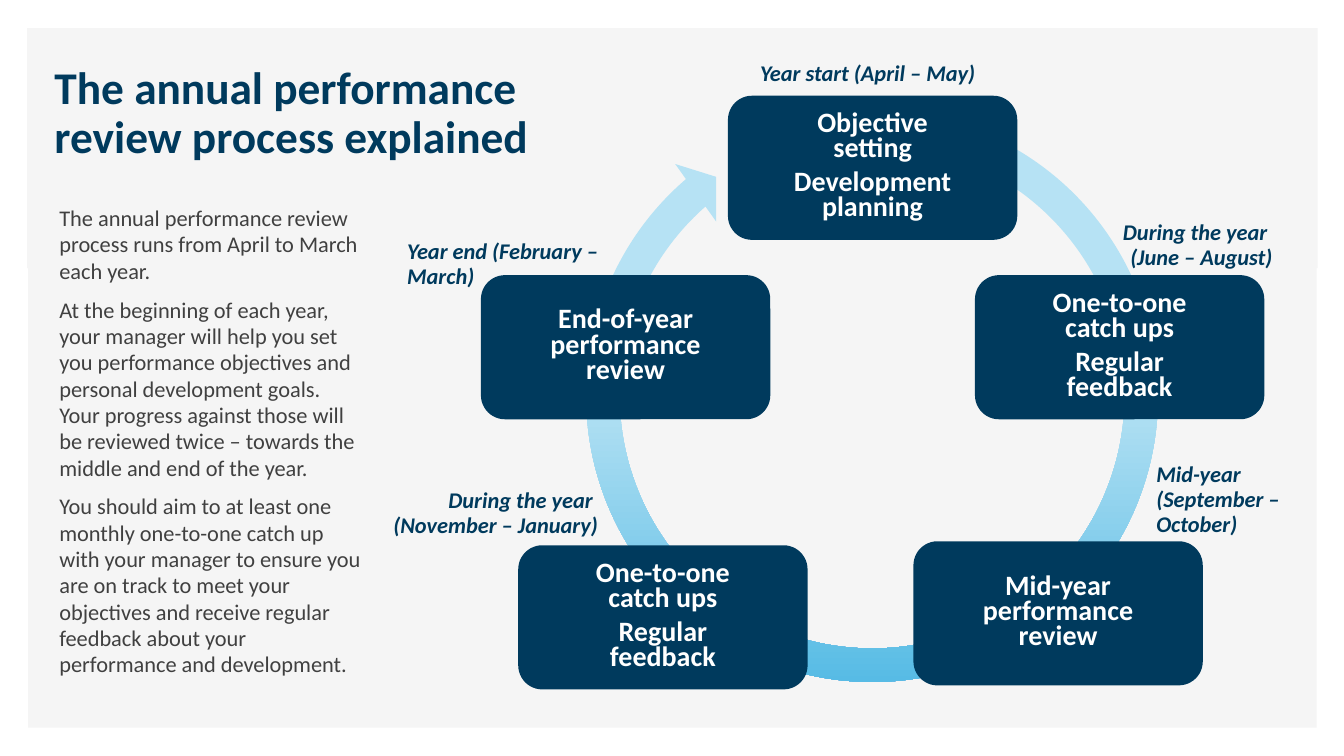
import copy

import pptx
import pptx.dml.color
import pptx.enum.shapes
import pptx.enum.text
import pptx.oxml.ns
import pptx.util

PX = 9144
SHAPE = pptx.enum.shapes.MSO_SHAPE
ALIGN = pptx.enum.text.PP_ALIGN
ANCHOR = pptx.enum.text.MSO_ANCHOR
THEME = {
    "font": "Calibri",
    "navy": pptx.dml.color.RGBColor.from_string("003A5D"),
    "panel": pptx.dml.color.RGBColor.from_string("F5F5F5"),
    "body": pptx.dml.color.RGBColor.from_string("404040"),
    "white": pptx.dml.color.RGBColor.from_string("FFFFFF"),
    "cycle": [(0, "B6E2F4"), (0.5, "B4E1F3"), (1, "51B9E4")],
    "title_size": 32.4,
    "stage_size": 20,
    "text_size": 16,
}


def px(*lengths):
    return [pptx.util.Emu(length * PX) for length in lengths]


def write(holder, lines, size, color, bold=False, italic=False, align=ALIGN.LEFT,
          anchor=ANCHOR.TOP, spacing=None, after=0, side=10):
    frame = holder.text_frame
    frame.word_wrap = True
    frame.auto_size = pptx.enum.text.MSO_AUTO_SIZE.NONE
    frame.vertical_anchor = anchor
    frame.margin_left, frame.margin_right = px(side, side)
    frame.margin_top, frame.margin_bottom = px(5, 5)
    for number, line in enumerate(lines):
        paragraph = frame.add_paragraph() if number else frame.paragraphs[0]
        paragraph.alignment = align
        paragraph.line_spacing = spacing
        paragraph.space_before = pptx.util.Pt(0)
        paragraph.space_after = pptx.util.Pt(after)
        run = paragraph.add_run()
        run.text = line
        run.font.name = THEME["font"]
        run.font.size = pptx.util.Pt(size)
        run.font.bold = bold
        run.font.italic = italic
        run.font.color.rgb = color


deck = pptx.Presentation()
deck.slide_width, deck.slide_height = px(1333, 750)
slide = deck.slides.add_slide(deck.slide_layouts[5])
shapes = slide.shapes

for place in [(28, 29, 1278, 693), (27, 28, 1280, 238)]:
    panel = shapes.add_shape(SHAPE.RECTANGLE, *px(*place))
    panel.shadow.inherit = False
    panel.fill.solid()
    panel.fill.fore_color.rgb = THEME["panel"]
    panel.line.fill.background()

title = shapes.title
title.left, title.top, title.width, title.height = px(44, 57, 497, 112)
write(title, ["The annual performance review process explained"],
      size=THEME["title_size"], color=THEME["navy"], bold=True,
      anchor=ANCHOR.MIDDLE, spacing=0.9)
panel._element.addnext(title._element)

explanation = shapes.add_textbox(*px(49, 199, 321, 500))
write(explanation, [
    "The annual performance review process runs from April to March each year.",
    "At the beginning of each year, your manager will help you set you performance "
    "objectives and personal development goals. Your progress against those will be "
    "reviewed twice – towards the middle and end of the year.",
    "You should aim to at least one monthly one-to-one catch up with your manager to "
    "ensure you are on track to meet your objectives and receive regular feedback "
    "about your performance and development.",
], size=THEME["text_size"], color=THEME["body"], spacing=0.98, after=9)

cycle = shapes.add_shape(SHAPE.CIRCULAR_ARROW, *px(563, 91, 604, 604))
for index, value in enumerate([0.055, 3.307, 137.434, 174.058, 0.058]):
    cycle.adjustments[index] = value
cycle.shadow.inherit = False
cycle.line.fill.background()
cycle.fill.gradient()
cycle.fill.gradient_angle = 270
stop_list = cycle._element.spPr.find(".//" + pptx.oxml.ns.qn("a:gsLst"))
stop_list.insert(1, copy.deepcopy(stop_list[0]))
for stop, (position, color) in zip(cycle.fill.gradient_stops, THEME["cycle"]):
    stop.position = position
    stop.color.rgb = pptx.dml.color.RGBColor.from_string(color)

catch_up = ["One-to-one catch ups", "Regular feedback"]
stages = [
    (722, 95, ["Objective setting", "Development planning"]),
    (967, 273, catch_up),
    (906, 537, ["Mid-year performance review"]),
    (514, 541, catch_up),
    (477, 273, ["End-of-year performance review"]),
]
for left, top, lines in stages:
    stage = shapes.add_shape(SHAPE.ROUNDED_RECTANGLE, *px(left, top, 287, 143))
    stage.shadow.inherit = False
    stage.fill.solid()
    stage.fill.fore_color.rgb = THEME["navy"]
    stage.line.fill.background()
    write(stage, lines, size=THEME["stage_size"], color=THEME["white"], bold=True,
          align=ALIGN.CENTER, anchor=ANCHOR.MIDDLE, spacing=pptx.util.Pt(18),
          after=6, side=40)

periods = [
    ((744, 55, 252, 40), ["Year start (April – May)"], ALIGN.LEFT, ANCHOR.TOP),
    ((1020, 217, 252, 52), ["During the year ", "(June – August)"], ALIGN.RIGHT, ANCHOR.MIDDLE),
    ((1137, 466, 195, 59), ["Mid-year", "(September – October)"], ALIGN.LEFT, ANCHOR.MIDDLE),
    ((351, 483, 252, 52), ["During the year ", "(November – January)"], ALIGN.RIGHT, ANCHOR.MIDDLE),
    ((394, 232, 254, 36), ["Year end (February – March)"], ALIGN.LEFT, ANCHOR.TOP),
]
for place, lines, align, anchor in periods:
    period = shapes.add_textbox(*px(*place))
    write(period, lines, size=THEME["text_size"], color=THEME["navy"], bold=True,
          italic=True, align=align, anchor=anchor, spacing=pptx.util.Pt(18))

deck.save("out.pptx")
